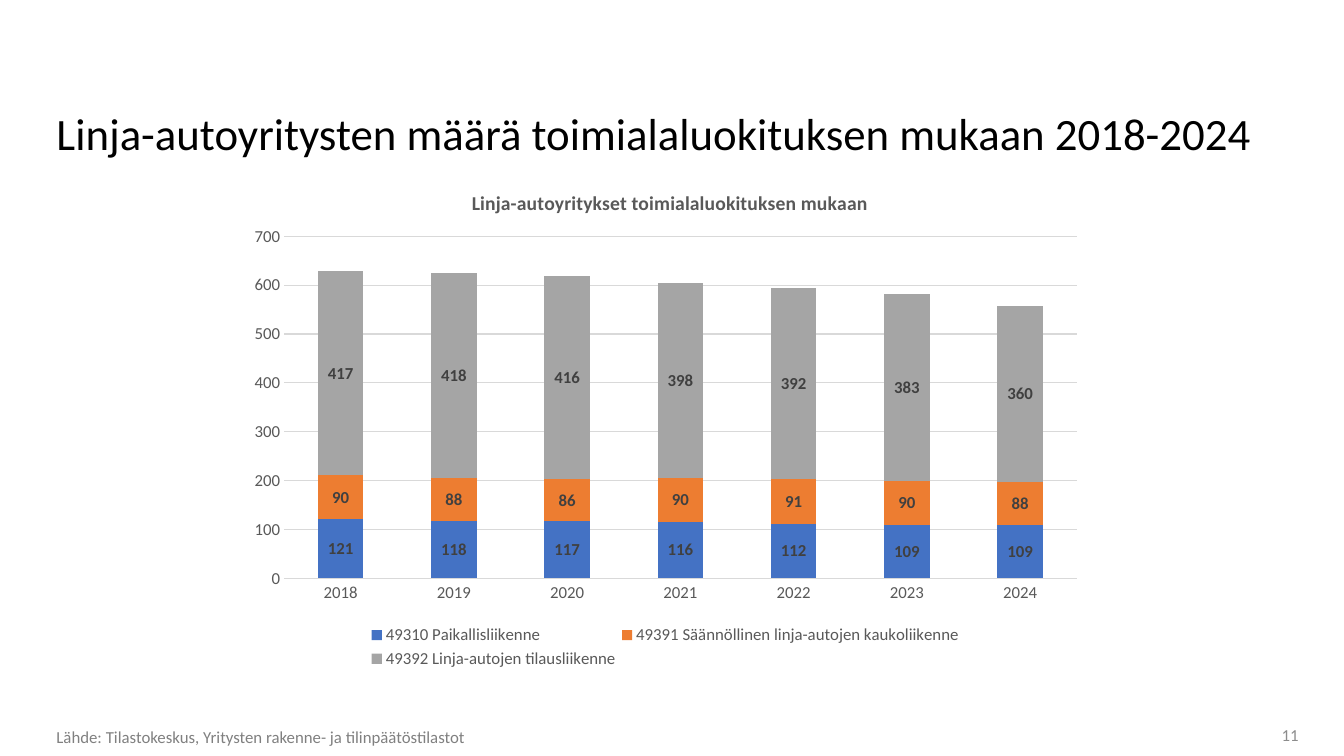
from lxml import etree
from pptx import Presentation
from pptx.chart.data import CategoryChartData
from pptx.dml.color import RGBColor
from pptx.enum.chart import XL_CHART_TYPE, XL_LABEL_POSITION, XL_LEGEND_POSITION, XL_TICK_MARK
from pptx.enum.text import MSO_ANCHOR, MSO_AUTO_SIZE, PP_ALIGN
from pptx.oxml.ns import qn
from pptx.util import Inches, Pt

STACKED = XL_CHART_TYPE.COLUMN_STACKED
CENTER = XL_LABEL_POSITION.CENTER
BOTTOM = XL_LEGEND_POSITION.BOTTOM
NO_TICK = XL_TICK_MARK.NONE
MIDDLE, LOW = MSO_ANCHOR.MIDDLE, MSO_ANCHOR.BOTTOM
LEFT, RIGHT = PP_ALIGN.LEFT, PP_ALIGN.RIGHT

FONT = "Calibri"
COLORS = {
    "title": "000000", "source": "808080", "number": "8C8C8C",
    "axis": "595959", "label": "404040", "grid": "D9D9D9",
    "local": "4472C4", "long": "ED7D31", "charter": "A5A5A5",
}
YEARS = [str(year) for year in range(2018, 2025)]
SERIES = [
    ("49310 Paikallisliikenne", "local", (121, 118, 117, 116, 112, 109, 109)),
    ("49391 Säännöllinen linja-autojen kaukoliikenne", "long", (90, 88, 86, 90, 91, 90, 88)),
    ("49392 Linja-autojen tilausliikenne", "charter", (417, 418, 416, 398, 392, 383, 360)),
]


def rgb(name):
    """Return a named colour."""
    return RGBColor.from_string(COLORS[name])


def format_font(font, size, color, bold=False):
    """Set typeface, size, colour and weight."""
    font.name, font.size, font.bold = FONT, Pt(size), bold
    font.color.rgb = rgb(color)


def set_text(sp, text, box, size, color, align=LEFT, anchor=MIDDLE, right=0.1):
    """Place a text shape and fill it with one formatted paragraph."""
    sp.left, sp.top, sp.width, sp.height = [Inches(v) for v in box]
    tf = sp.text_frame
    tf.word_wrap, tf.auto_size = True, MSO_AUTO_SIZE.NONE
    tf.vertical_anchor = anchor
    tf.margin_right = Inches(right)
    p = tf.paragraphs[0]
    p.alignment, p.space_before = align, Pt(0)
    r = p.add_run()
    r.text = text
    format_font(r.font, size, color)
    return p


def remove_bullet(p):
    """Turn a list paragraph into plain text."""
    pPr = p._p.get_or_add_pPr()
    pPr.set("marL", "0")
    pPr.set("indent", "0")
    etree.SubElement(pPr, qn("a:buNone"))


def set_layout(element, index, inner=False, **fractions):
    """Position a chart part by fractions of the chart area."""
    for old in element.findall(qn("c:layout")):
        element.remove(old)
    layout = etree.Element(qn("c:layout"))
    manual = etree.SubElement(layout, qn("c:manualLayout"))
    if inner:
        etree.SubElement(manual, qn("c:layoutTarget")).set("val", "inner")
    for axis in "xy":
        etree.SubElement(manual, qn(f"c:{axis}Mode")).set("val", "edge")
    for key, value in fractions.items():
        etree.SubElement(manual, qn(f"c:{key}")).set("val", str(value))
    element.insert(index, layout)


def format_axes(chart):
    """Style the category and value axes."""
    for axis in (chart.category_axis, chart.value_axis):
        axis.major_tick_mark = axis.minor_tick_mark = NO_TICK
        format_font(axis.tick_labels.font, 12, "axis")
    values = chart.value_axis
    values.minimum_scale, values.maximum_scale, values.major_unit = 0, 700, 100
    values.tick_labels.number_format = "0"
    values.tick_labels.number_format_is_linked = False
    values.format.line.fill.background()
    for line in (chart.category_axis.format.line, values.major_gridlines.format.line):
        line.color.rgb, line.width = rgb("grid"), Pt(0.75)


def format_series(series, color):
    """Colour a series and show its values."""
    series.format.fill.solid()
    series.format.fill.fore_color.rgb = rgb(color)
    labels = series.data_labels
    labels.show_value, labels.position = True, CENTER
    labels.number_format, labels.number_format_is_linked = "0", False
    format_font(labels.font, 12, "label", bold=True)


def add_company_chart(s):
    """Add the stacked column chart of bus companies."""
    data = CategoryChartData(number_format="0")
    data.categories = YEARS
    for name, _, values in SERIES:
        data.add_series(name, values)
    box = [Inches(v) for v in (2.35, 1.64, 8.5, 5.03)]
    chart = s.shapes.add_chart(STACKED, *box, data).chart
    format_font(chart.font, 10, "title")
    plot = chart.plots[0]
    plot.gap_width, plot.overlap, plot.vary_by_categories = 150, 100, False
    for series, (_, color, _) in zip(plot.series, SERIES):
        format_series(series, color)
    format_axes(chart)

    chart.has_title = True
    r = chart.chart_title.text_frame.paragraphs[0].add_run()
    r.text = "Linja-autoyritykset toimialaluokituksen mukaan"
    format_font(r.font, 14, "axis", bold=True)
    chart.has_legend = True
    chart.legend.position, chart.legend.include_in_layout = BOTTOM, False
    format_font(chart.legend.font, 12, "axis")

    plot_area = chart._chartSpace.find(".//" + qn("c:plotArea"))
    set_layout(plot_area, 0, inner=True, x=0.055, y=0.14, w=0.925, h=0.675)
    set_layout(chart.chart_title._element, 1, x=0.27, y=0.04)
    set_layout(chart.legend._element, 1, x=0.15, y=0.9, w=0.7, h=0.1)


def main():
    """Build and save the slide."""
    prs = Presentation()
    prs.slide_width, prs.slide_height = Inches(13.33), Inches(7.5)
    s = prs.slides.add_slide(prs.slide_layouts[1])
    set_text(s.shapes.title, "Linja-autoyritysten määrä toimialaluokituksen mukaan 2018-2024",
             (0.46, 1, 12.42, 0.63), 32, "title", anchor=LOW)
    source = set_text(s.placeholders[1],
                      "Lähde: Tilastokeskus, Yritysten rakenne- ja tilinpäätöstilastot",
                      (0.46, 7.19, 11.81, 0.26), 12, "source")
    source.line_spacing = 0.9
    remove_bullet(source)
    add_company_chart(s)
    number = s.shapes.add_textbox(0, 0, 0, 0)
    set_text(number, "11", (12.05, 7.14, 0.83, 0.3), 12, "number", align=RIGHT, right=0)
    prs.save("out.pptx")


if __name__ == "__main__":
    main()
